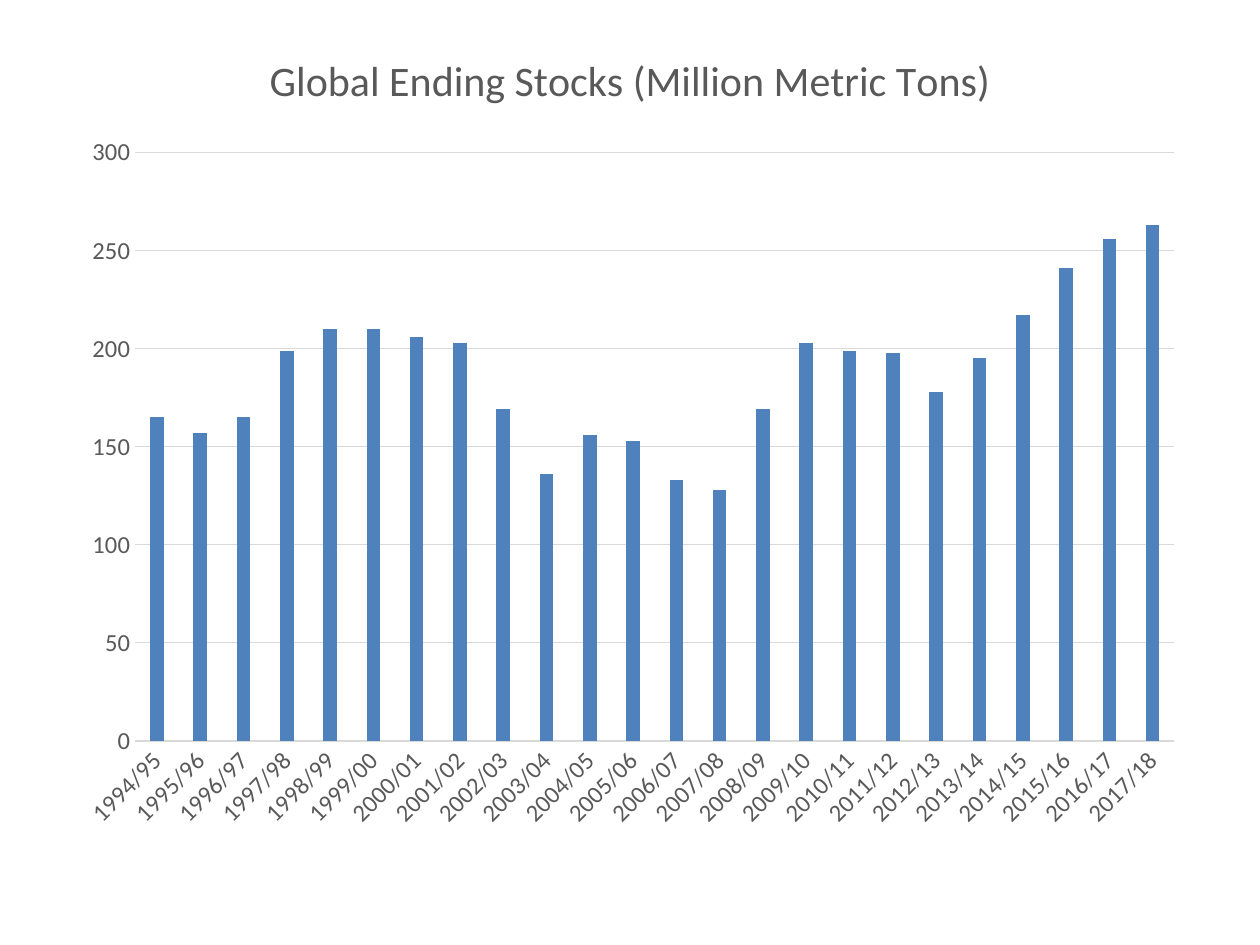
"""Build a slide with a column chart of global ending stocks by marketing year."""
from pptx import Presentation
from pptx.chart.data import CategoryChartData
from pptx.dml.color import RGBColor
from pptx.enum.chart import XL_CHART_TYPE as ChartType, XL_TICK_MARK as TickMark
from pptx.util import Pt

TITLE = "Global Ending Stocks (Million Metric Tons)"
FIRST_YEAR = 1994
STOCKS = [165, 157, 165, 199, 210, 210, 206, 203, 169, 136, 156, 153,
          133, 128, 169, 203, 199, 198, 178, 195, 217, 241, 256, 263]

FONT = "Calibri"
TEXT_GREY = RGBColor(0x59, 0x59, 0x59)
LINE_GREY = RGBColor(0xD9, 0xD9, 0xD9)
BAR_BLUE = RGBColor(0x4F, 0x81, 0xBD)


def style_font(font, size):
    font.name = FONT
    font.size = Pt(size)
    font.bold = False
    font.color.rgb = TEXT_GREY


def style_line(line):
    line.color.rgb = LINE_GREY
    line.width = Pt(0.75)


def add_stocks_chart(slide):
    data = CategoryChartData()
    years = range(FIRST_YEAR, FIRST_YEAR + len(STOCKS))
    data.categories = [f"{year}/{(year + 1) % 100:02d}" for year in years]
    data.add_series("Series 1", STOCKS)
    chart = slide.shapes.add_chart(ChartType.COLUMN_CLUSTERED, Pt(36), Pt(12.24),
                                   Pt(648), Pt(470.16), data).chart
    chart.has_legend = False
    chart.font.name = FONT
    chart.font.size = Pt(10)

    title_frame = chart.chart_title.text_frame
    title_frame.text = TITLE
    style_font(title_frame.paragraphs[0].runs[0].font, 24)
    chart.chart_title.include_in_layout = False

    plot = chart.plots[0]
    plot.gap_width = 219
    plot.overlap = -27
    plot.vary_by_categories = False
    fill = plot.series[0].format.fill
    fill.solid()
    fill.fore_color.rgb = BAR_BLUE

    category_axis, value_axis = chart.category_axis, chart.value_axis
    for axis in (category_axis, value_axis):
        axis.major_tick_mark = axis.minor_tick_mark = TickMark.NONE
        style_font(axis.tick_labels.font, 14)
    style_line(category_axis.format.line)
    category_axis._element.txPr.bodyPr.set("rot", "-2700000")
    value_axis.minimum_scale = 0
    value_axis.maximum_scale = 300
    value_axis.major_unit = 50
    value_axis.format.line.fill.background()
    style_line(value_axis.major_gridlines.format.line)


def main():
    presentation = Presentation()
    presentation.slide_width, presentation.slide_height = Pt(720), Pt(540)
    slide = presentation.slides.add_slide(presentation.slide_layouts[6])
    add_stocks_chart(slide)
    presentation.save("out.pptx")


if __name__ == "__main__":
    main()
